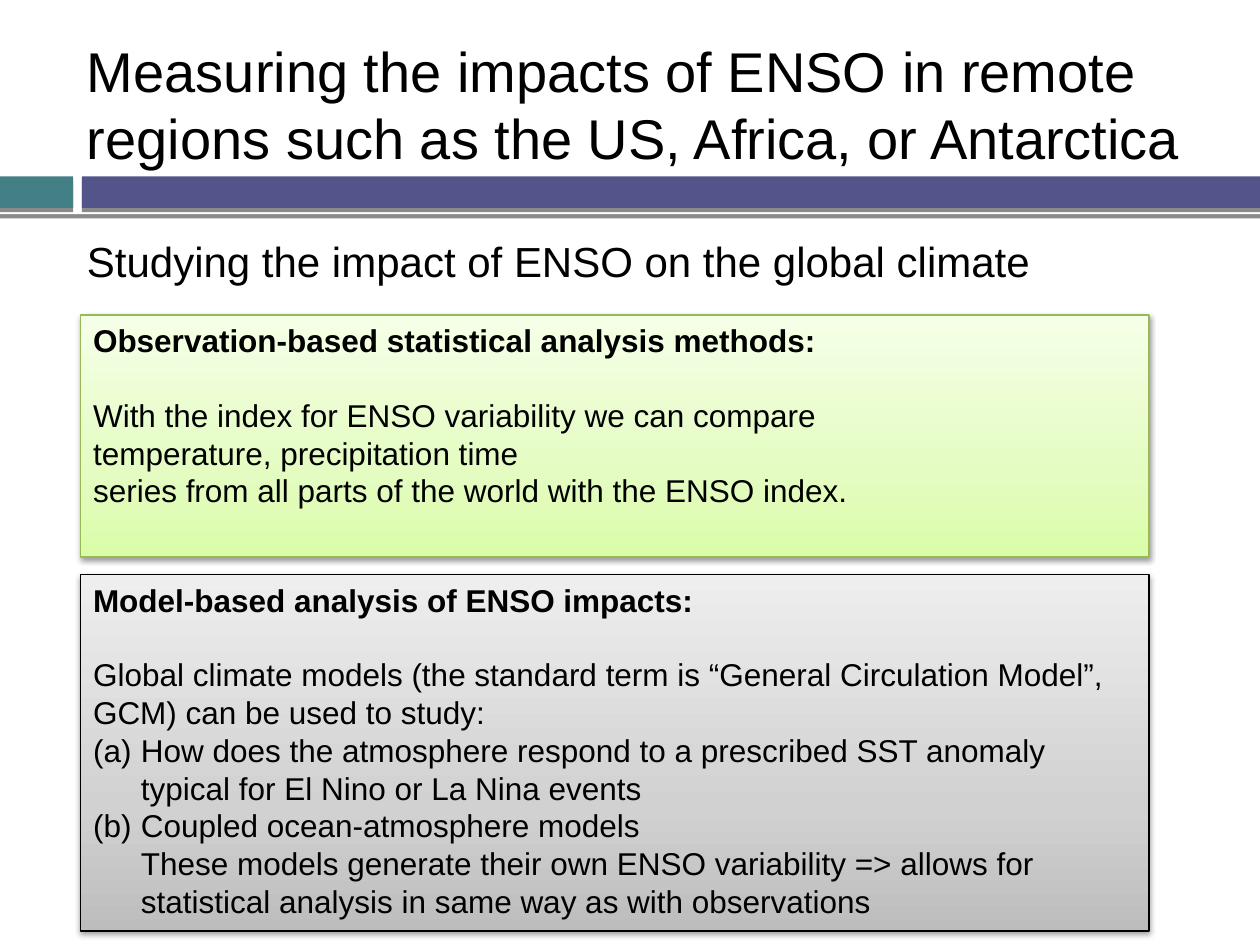
from copy import deepcopy
from dataclasses import dataclass

from lxml.etree import SubElement
from pptx import Presentation
from pptx.dml.color import RGBColor
from pptx.enum.shapes import MSO_SHAPE
from pptx.enum.text import MSO_ANCHOR, MSO_AUTO_SIZE, PP_ALIGN
from pptx.oxml.ns import qn
from pptx.util import Inches, Pt


@dataclass(frozen=True)
class Theme:
    """Colours, type sizes and shadows of the deck."""
    font: str = "Arial"
    ink: str = "000000"
    paper: str = "FFFFFF"
    teal: str = "438086"
    violet: str = "53548A"
    lime: tuple = ("DAFDA7", "E4FCC2", "F5FFE7")
    lime_edge: str = "98B955"
    grey: tuple = ("BDBDBD", "D1D1D1", "EEEEEE")
    stops: tuple = (0, 0.35, 1)
    title: int = 32
    lead: int = 24
    text: int = 18
    gap: int = 21
    hard: tuple = (45, 0, 2.4)
    soft: tuple = (38, 3.1, 1.6)


def write(para, text, size, theme, bold=False, before=0, mark=None, hang=0):
    """Fill a paragraph with formatted text, numbered when a mark is given."""
    para.text = text
    props = para._p.get_or_add_pPr()
    props.set("marL", str(Inches(hang)))
    props.set("indent", str(Inches(-hang)))
    if mark:
        SubElement(props, qn("a:buAutoNum"), type=mark)
    else:
        SubElement(props, qn("a:buNone"))
    para.alignment = PP_ALIGN.LEFT
    para.space_before = Pt(before)
    for run in para.runs:
        font = run.font
        font.name, font.size, font.bold = theme.font, Pt(size), bold
        font.color.rgb = RGBColor.from_string(theme.ink)
    for brk in para._p.findall(qn("a:br")):
        SubElement(brk, qn("a:rPr"), sz=str(size * 100))


class Deck:
    """Hold the theme and the current slide, on a grid of 100 by 75 cells."""

    def __init__(self, theme):
        """Open a blank deck with one title and body slide."""
        self.theme = theme
        self.show = Presentation()
        self.show.slide_width, self.show.slide_height = Inches(10), Inches(7.5)
        self.slide = self.show.slides.add_slide(self.show.slide_layouts[1])

    def grid(self, cells):
        """Turn grid cells into lengths."""
        wide, high = self.show.slide_width / 100, self.show.slide_height / 75
        return [round(n * unit) for n, unit in zip(cells, (wide, high) * 2)]

    def frame(self, shape):
        """Give a shape a plain frame with its text at the top."""
        frame = shape.text_frame
        frame.word_wrap = True
        frame.auto_size = MSO_AUTO_SIZE.NONE
        frame.vertical_anchor = MSO_ANCHOR.TOP
        return frame

    def holder(self, index, cells, text, size):
        """Move a template placeholder to the front and fill it."""
        shape = self.slide.placeholders[index]
        shape.left, shape.top, shape.width, shape.height = self.grid(cells)
        self.slide.shapes._spTree.append(shape._element)
        write(self.frame(shape).paragraphs[0], text, size, self.theme)

    def block(self, cells, shade):
        """Add a rectangle with a shadow straight below it."""
        shape = self.slide.shapes.add_shape(MSO_SHAPE.RECTANGLE, *self.grid(cells))
        shape.shadow.inherit = False
        alpha, blur, drop = shade
        effect = shape._element.spPr.find(qn("a:effectLst"))
        outer = SubElement(effect, qn("a:outerShdw"), blurRad=str(Pt(blur)),
                           dist=str(Pt(drop)), dir="5400000", rotWithShape="0")
        tint = SubElement(outer, qn("a:srgbClr"), val=self.theme.ink)
        SubElement(tint, qn("a:alpha"), val=str(alpha * 1000))
        return shape

    def bar(self, cells, color):
        """Add a plain bar without an outline."""
        shape = self.block(cells, self.theme.hard)
        shape.fill.solid()
        shape.fill.fore_color.rgb = RGBColor.from_string(color)
        shape.line.fill.background()

    def panel(self, cells, colors, edge, head, items):
        """Add a shaded panel with a bold heading and its paragraphs."""
        theme = self.theme
        shape = self.block(cells, theme.soft)
        shape.fill.gradient()
        shape.fill.gradient_angle = 90
        stops = shape._element.spPr.find(qn("a:gradFill")).find(qn("a:gsLst"))
        stops.insert(1, deepcopy(stops[0]))
        for stop, place, color in zip(shape.fill.gradient_stops, theme.stops, colors):
            stop.position = place
            stop.color.rgb = RGBColor.from_string(color)
        shape.line.color.rgb = RGBColor.from_string(edge)
        shape.line.width = Pt(0.75)
        frame = self.frame(shape)
        write(frame.paragraphs[0], head, theme.text, theme, bold=True)
        for row, (text, style) in enumerate(items):
            write(frame.add_paragraph(), text, theme.text, theme,
                  before=0 if row else theme.gap, **style)


def main():
    """Build and save the slide."""
    theme = Theme()
    deck = Deck(theme)
    deck.bar((0, 13.5, 100, 3.5), theme.paper)
    deck.bar((0, 14, 5.8, 2.5), theme.teal)
    deck.bar((6.5, 14, 93.5, 2.5), theme.violet)
    deck.holder(0, (5.9, 2.4, 89.5, 11.8),
                "Measuring the impacts of ENSO in remote\n"
                "regions such as the US, Africa, or Antarctica", theme.title)
    deck.holder(1, (5.9, 18.2, 85.8, 9.1),
                "Studying the impact of ENSO on the global climate", theme.lead)
    plain, item = {}, {"mark": "alphaLcParenBoth", "hang": 0.38}
    deck.panel((6.4, 25, 84.8, 19.2), theme.lime, theme.lime_edge,
               "Observation-based statistical analysis methods:", [
                   ("With the index for ENSO variability we can compare", plain),
                   ("temperature, precipitation time\n"
                    "series from all parts of the world with the ENSO index.", plain)])
    deck.panel((6.4, 45.6, 84.8, 28.3), theme.grey, theme.ink,
               "Model-based analysis of ENSO impacts:", [
                   ("Global climate models (the standard term is “General Circulation "
                    "Model”, GCM) can be used to study:", plain),
                   ("How does the atmosphere respond to a prescribed SST anomaly "
                    "typical for El Nino or La Nina events", item),
                   ("Coupled ocean-atmosphere models\n"
                    "These models generate their own ENSO variability => allows for "
                    "statistical analysis in same way as with observations", item)])
    deck.show.save("out.pptx")


if __name__ == "__main__":
    main()
